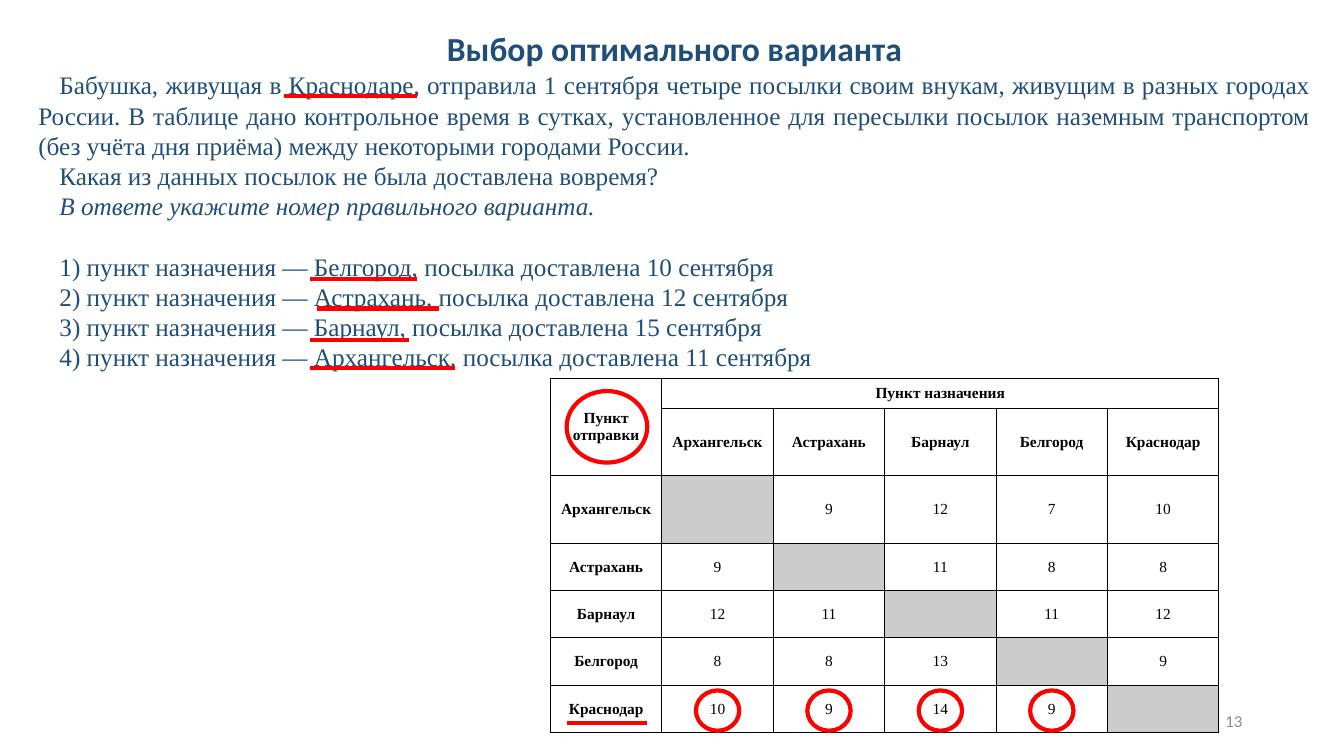
from dataclasses import dataclass

from lxml.etree import SubElement
from pptx import Presentation
from pptx.dml.color import RGBColor
from pptx.enum.shapes import MSO_CONNECTOR, MSO_SHAPE
from pptx.enum.text import MSO_ANCHOR, MSO_AUTO_SIZE, PP_ALIGN
from pptx.oxml import parse_xml
from pptx.oxml.ns import nsdecls, qn
from pptx.util import Inches, Pt


@dataclass(frozen=True)
class Theme:
    blue: str = "1F4E79"
    black: str = "000000"
    red: str = "FF0000"
    gray: str = "8C8C8C"
    blank: str = "CCCCCC"
    sans: str = "Calibri"
    serif: str = "Times New Roman"
    title: int = 24
    body: int = 18
    cell: int = 11
    number: int = 12
    mark: float = 3
    leading: float = 21.6


T = Theme()

TITLE = "Выбор оптимального варианта"
INTRO = [
    "Бабушка, живущая в Краснодаре, отправила 1 сентября четыре посылки своим внукам, "
    "живущим в разных городах России. В таблице дано контрольное время в сутках, "
    "установленное для пересылки посылок наземным транспортом (без учёта дня приёма) "
    "между некоторыми городами России.",
    "Какая из данных посылок не была доставлена вовремя?",
]
HINT = "В ответе укажите номер правильного варианта."
PARCELS = [("Белгород", 10), ("Астрахань", 12), ("Барнаул", 15), ("Архангельск", 11)]
# Underlines in the text: left, top and length, from the corner of the body box
UNDERLINES = [(2.54, 0.31, 1.32), (2.79, 2.13, 1.07), (2.86, 2.42, 1.21),
              (2.79, 2.73, 0.99), (2.79, 3.01, 1.44)]

CITIES = ["Архангельск", "Астрахань", "Барнаул", "Белгород", "Краснодар"]
DAYS = [
    ["", 9, 12, 7, 10],
    [9, "", 11, 8, 8],
    [12, 11, "", 11, 12],
    [8, 8, 13, "", 9],
    [10, 9, 14, 9, ""],
]
ROW_HEIGHTS = [0.3, 0.67, 0.67, 0.47, 0.47, 0.47, 0.47]


def style(p, font, size, color, bold=False, italic=False, align=PP_ALIGN.CENTER):
    p.alignment = align
    for r in p.runs:
        r.font.name, r.font.size = font, Pt(size)
        r.font.bold, r.font.italic = bold, italic
        r.font.color.rgb = RGBColor.from_string(color)


def place(shape, box):
    shape.left, shape.top, shape.width, shape.height = map(Inches, box)


def underline(s, x, y, length):
    line = s.shapes.add_connector(MSO_CONNECTOR.STRAIGHT, Inches(x), Inches(y),
                                  Inches(x + length), Inches(y))
    line.line.color.rgb = RGBColor.from_string(T.red)
    line.line.width = Pt(T.mark)
    SubElement(line._element.spPr, qn("a:effectLst"))


def circle(s, x, y, w, h):
    ring = s.shapes.add_shape(MSO_SHAPE.OVAL, *map(Inches, (x, y, w, h)))
    ring.shadow.inherit = False
    ring.fill.background()
    ring.line.color.rgb = RGBColor.from_string(T.red)
    ring.line.width = Pt(T.mark)


def add_title(s, box):
    place(s.shapes.title, box)
    tf = s.shapes.title.text_frame
    tf.text = TITLE
    tf.auto_size, tf.vertical_anchor = MSO_AUTO_SIZE.NONE, MSO_ANCHOR.TOP
    style(tf.paragraphs[0], T.sans, T.title, T.blue, bold=True)


def add_problem(s, box):
    body = s.placeholders[1]
    place(body, box)
    options = [f"{n}) пункт назначения — {city}, посылка доставлена {day} сентября"
               for n, (city, day) in enumerate(PARCELS, 1)]
    tf = body.text_frame
    tf.text = "\n".join(INTRO + [HINT] + options)
    tf.auto_size, tf.vertical_anchor = MSO_AUTO_SIZE.NONE, MSO_ANCHOR.TOP
    for p in tf.paragraphs:
        pPr = p._p.get_or_add_pPr()
        pPr.set("marL", "0")
        pPr.set("indent", str(Inches(0.21)))
        SubElement(pPr, qn("a:buNone"))
        p.line_spacing = Pt(T.leading)
        p.space_before = Pt(T.leading if p.text == options[0] else 0)
        style(p, T.serif, T.body, T.blue, italic=p.text == HINT, align=PP_ALIGN.JUSTIFY)
    for x, y, length in UNDERLINES:
        underline(s, box[0] + x, box[1] + y, length)


def add_borders(cell):
    tcPr = cell._tc.get_or_add_tcPr()
    for i, side in enumerate(("lnL", "lnR", "lnT", "lnB")):
        tcPr.insert(i, parse_xml(
            f'<a:{side} {nsdecls("a")} w="{Pt(0.75)}"><a:solidFill>'
            f'<a:srgbClr val="{T.black}"/></a:solidFill></a:{side}>'))


def add_times(s, box):
    """Delivery time table with the sender's row marked in red."""
    left, top, width, height = box
    grid = [["Пункт отправки", "Пункт назначения", "", "", "", ""], ["", *CITIES]]
    grid += [[city, *days] for city, days in zip(CITIES, DAYS)]
    table = s.shapes.add_table(len(grid), len(grid[0]), *map(Inches, box)).table
    table.first_row = table.horz_banding = False
    col = width / len(grid[0])
    for column in table.columns:
        column.width = Inches(col)
    for row, row_height in zip(table.rows, ROW_HEIGHTS):
        row.height = Inches(row_height)
    table.cell(0, 0).merge(table.cell(1, 0))
    table.cell(0, 1).merge(table.cell(0, len(CITIES)))

    for i, values in enumerate(grid):
        for j, value in enumerate(values):
            cell = table.cell(i, j)
            cell.margin_left = cell.margin_right = Inches(0.04)
            cell.margin_top = cell.margin_bottom = Inches(0.04)
            cell.vertical_anchor = MSO_ANCHOR.MIDDLE
            if i > 1 and j == i - 1:
                cell.fill.solid()
                cell.fill.fore_color.rgb = RGBColor.from_string(T.blank)
            else:
                cell.fill.background()
            add_borders(cell)
            if value != "":
                cell.text = str(value)
                style(cell.text_frame.paragraphs[0], T.serif, T.cell, T.black,
                      bold=i < 2 or j == 0)

    circle(s, left + 0.16, top + 0.13, 0.8, 0.71)
    underline(s, left + 0.16, top + 3.42, 0.8)
    w, h = 0.43, 0.4
    for j in range(1, len(CITIES)):
        circle(s, left + (j + 0.5) * col - w / 2, top + height - 0.44, w, h)


def add_number(s, box):
    tf = s.shapes.add_textbox(*map(Inches, box)).text_frame
    tf.word_wrap, tf.vertical_anchor = True, MSO_ANCHOR.MIDDLE
    tf.text = "13"
    style(tf.paragraphs[0], T.sans, T.number, T.gray, align=PP_ALIGN.RIGHT)


def main():
    prs = Presentation()
    prs.slide_width, prs.slide_height = Inches(13.33), Inches(7.5)
    s = prs.slides.add_slide(prs.slide_layouts[1])
    add_number(s, (9.42, 6.95, 3, 0.4))
    add_title(s, (0.28, 0.23, 12.82, 0.5))
    add_problem(s, (0.28, 0.64, 12.82, 3.43))
    add_times(s, (5.46, 3.75, 6.63, 3.54))
    prs.save("out.pptx")


if __name__ == "__main__":
    main()
